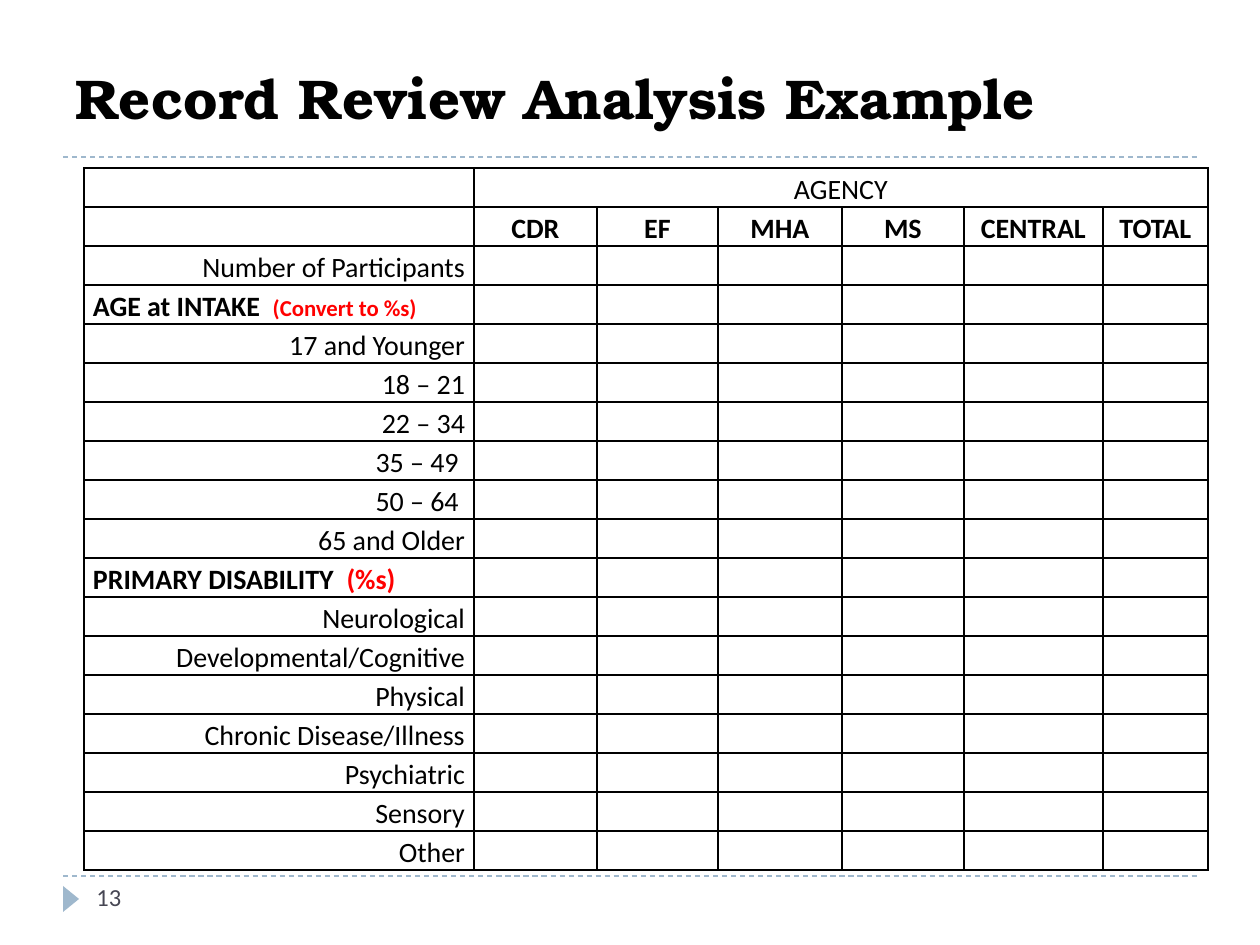
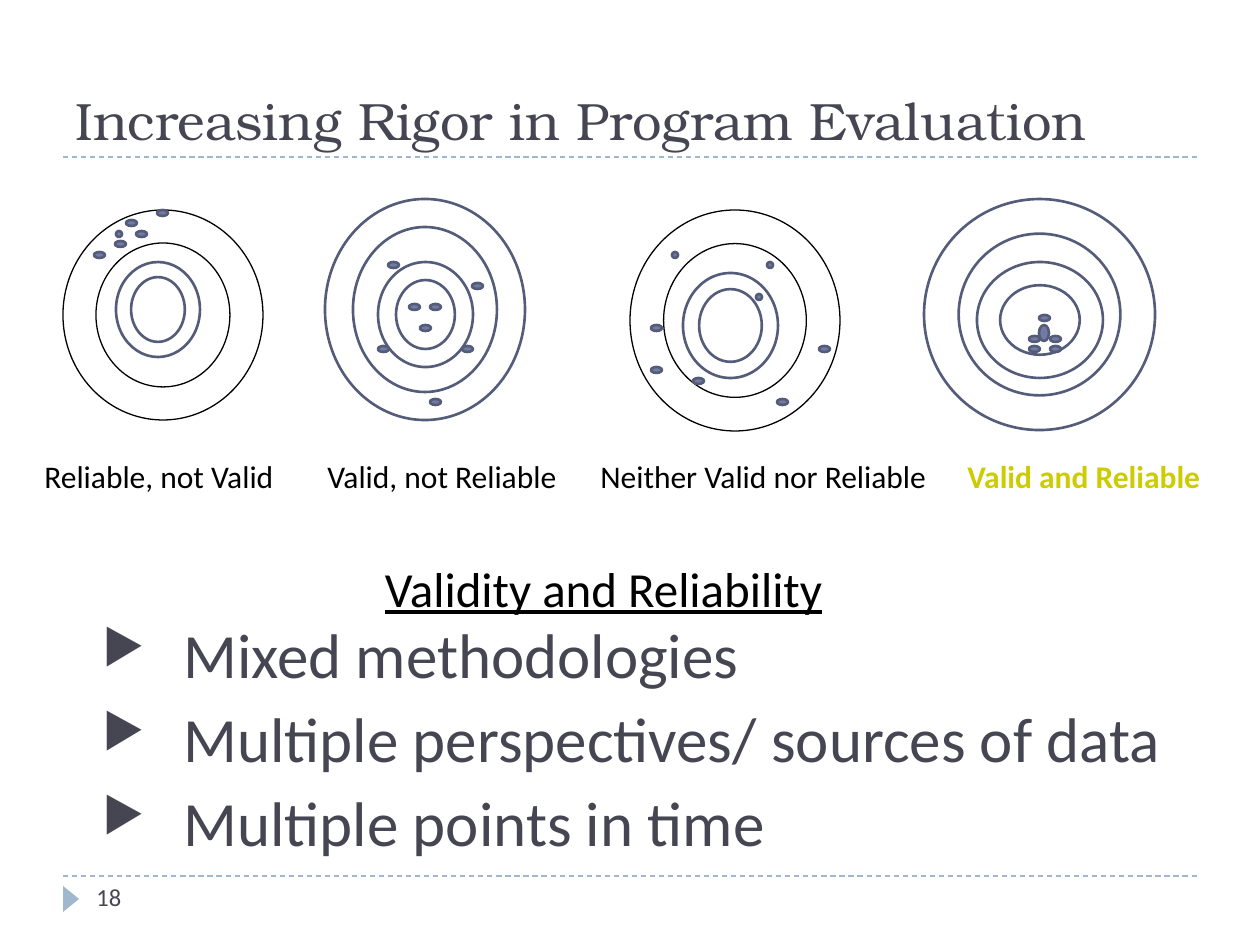
from lxml.etree import SubElement as Sub
from pptx import Presentation
from pptx.dml.color import RGBColor as Rgb
from pptx.enum.dml import MSO_LINE as Dash
from pptx.enum.shapes import MSO_CONNECTOR as Link, MSO_SHAPE as Kind
from pptx.enum.text import MSO_ANCHOR as Anchor, PP_ALIGN as Align
from pptx.oxml.ns import qn
from pptx.util import Emu, Pt

HUES = {"ink": "000000", "slate": "464653", "sky": "9FB8CD", "dot": "727CA3",
        "ring": "545C79", "red": "FF0000", "lime": "CCCC00"}
RGB = {name: Rgb.from_string(code) for name, code in HUES.items()}
BODY, HEAD = "Calibri", "TeX Gyre Bonum"
SCALE = 914400 / 126


def px(*vals):
    return [Emu(round(val * SCALE)) for val in vals]


def write(par, text, hue="ink", size=16, **form):
    font = par.add_run()
    font.text = text
    font = font.font
    font.color.rgb = RGB[hue]
    for key, val in {"name": BODY, "size": Pt(size), **form}.items():
        setattr(font, key, val)


deck = Presentation()
deck.slide_width, deck.slide_height = px(1260, 945)

heads = [
    ("Record Review Analysis Example", (63, 38, 1134, 99), "13",
     {"hue": "ink", "size": 32, "bold": True}),
    ("Increasing Rigor in Program Evaluation", (63, 21, 1134, 136), "18",
     {"hue": "slate", "size": 30}),
]
slides = []
for title, area, num, form in heads:
    slide = deck.slides.add_slide(deck.slide_layouts[6])
    slides.append(slide)
    for y in (876, 157):
        rule = slide.shapes.add_connector(Link.STRAIGHT, *px(63, y, 1197, y))
        rule.line.color.rgb = RGB["sky"]
        rule.line.width = Pt(0.75)
        rule.line.dash_style = Dash.DASH
        Sub(rule._element.spPr, qn("a:effectLst"))
    mark = slide.shapes.add_shape(Kind.ISOSCELES_TRIANGLE, *px(58, 891, 26, 16))
    mark.rotation = 90
    mark.shadow.inherit = False
    mark.fill.solid()
    mark.fill.fore_color.rgb = RGB["sky"]
    mark.line.fill.background()
    frame = slide.shapes.add_textbox(*px(*area)).text_frame
    frame.word_wrap = True
    frame.vertical_anchor = Anchor.BOTTOM
    write(frame.paragraphs[0], title, name=HEAD, **form)
    frame = slide.shapes.add_textbox(*px(84, 876, 273, 50)).text_frame
    frame.word_wrap = True
    write(frame.paragraphs[0], num, "slate", 14)

review, rigor = slides

groups = ["CDR", "EF", "MHA", "MS", "CENTRAL", "TOTAL"]
labels = [
    "Number of Participants", ("AGE at INTAKE  ", "(Convert to %s)", 13),
    "17 and Younger", "18 – 21", "22 – 34", "35 – 49 ", "50 – 64 ", "65 and Older",
    ("PRIMARY DISABILITY  ", "(%s)", 16), "Neurological", "Developmental/Cognitive",
    "Physical", "Chronic Disease/Illness", "Psychiatric", "Sensory", "Other",
]
wides = [390, 123, 121, 124, 122, 139, 105]
count = len(labels) + 2
grid = review.shapes.add_table(count, len(wides), *px(84, 168, sum(wides), 39 * count)).table
grid.first_row = grid.horz_banding = False
for col, wide in zip(grid.columns, wides):
    col.width = px(wide)[0]
for row in grid.rows:
    row.height = px(39)[0]
grid.cell(0, 1).merge(grid.cell(0, 6))

pad = px(9)[0]
look = {"margin_left": pad, "margin_right": pad, "margin_top": 0, "margin_bottom": 0,
        "vertical_anchor": Anchor.MIDDLE}
for cell in grid.iter_cells():
    for key, val in look.items():
        setattr(cell, key, val)
    prop = cell._tc.get_or_add_tcPr()
    for side in ("a:lnL", "a:lnR", "a:lnT", "a:lnB"):
        edge = Sub(prop, qn(side), w=str(Pt(1)))
        Sub(Sub(edge, qn("a:solidFill")), qn("a:srgbClr"), val=HUES["ink"])
    cell.fill.background()
    cell.text_frame.paragraphs[0].line_spacing = 1.15

tops = [(0, 1, "AGENCY", False)]
tops += [(1, col, name, True) for col, name in enumerate(groups, 1)]
for row, col, name, bold in tops:
    par = grid.cell(row, col).text_frame.paragraphs[0]
    par.alignment = Align.CENTER
    write(par, name, bold=bold)
for row, label in enumerate(labels, 2):
    par = grid.cell(row, 0).text_frame.paragraphs[0]
    if isinstance(label, tuple):
        name, note, size = label
        write(par, name, bold=True)
        write(par, note, "red", size, bold=True)
    else:
        par.alignment = Align.RIGHT
        write(par, label)
for cell in grid.iter_cells():
    par = cell.text_frame.paragraphs[0]
    if not par.runs:
        Sub(par._p, qn("a:endParaRPr"), sz="1600")

rings = [
    (63, 210, 200, 210, 0.165, "ink"), (116, 262, 84, 95, 0.18, "ring"),
    (325, 199, 200, 221, 0.14, "ring"), (378, 262, 95, 105, 0.19, "ring"),
    (630, 210, 210, 221, 0.16, "ink"), (683, 273, 95, 105, 0.17, "ring"),
    (924, 199, 231, 231, 0.15, "ring"), (977, 262, 126, 116, 0.2, "ring"),
]
for *area, thick, hue in rings:
    ring = rigor.shapes.add_shape(Kind.DONUT, *px(*area))
    ring.adjustments[0] = thick
    ring.shadow.inherit = False
    ring.fill.background()
    ring.line.color.rgb = RGB[hue]
    ring.line.width = Pt(0.75 if hue == "ink" else 1.5)

flat, small, tall = (11, 6), (6, 6), (10, 16)
dots = {
    flat: [
        (136, 231), (157, 210), (94, 252), (115, 241), (126, 220),
        (420, 325), (430, 304), (472, 283), (378, 346), (430, 399), (388, 262),
        (462, 346), (409, 304),
        (819, 346), (651, 325), (651, 367), (777, 399), (693, 378),
        (1050, 336), (1050, 346), (1029, 336), (1029, 346), (1039, 315),
    ],
    small: [(116, 231), (672, 252), (767, 262), (756, 294)],
    tall: [(1039, 325)],
}
for size, spots in dots.items():
    for spot in spots:
        dot = rigor.shapes.add_shape(Kind.OVAL, *px(*spot, *size))
        dot.shadow.inherit = False
        dot.fill.solid()
        dot.fill.fore_color.rgb = RGB["dot"]
        dot.line.color.rgb = RGB["ring"]
        dot.line.width = Pt(1.5)

notes = [
    ("Reliable, not Valid", (32, 451, 262, 50), {"size": 18}),
    ("Valid, not Reliable", (315, 451, 262, 50), {"size": 18}),
    ("Neither Valid nor Reliable", (588, 451, 357, 50), {"size": 18}),
    ("Valid and Reliable", (955, 451, 305, 50), {"size": 18, "hue": "lime", "bold": True}),
    ("Validity and Reliability", (325, 552, 557, 72), {"size": 28, "underline": True}),
]
for text, area, form in notes:
    frame = rigor.shapes.add_textbox(*px(*area)).text_frame
    frame.word_wrap = True
    par = frame.paragraphs[0]
    if "underline" in form:
        par.alignment = Align.CENTER
    write(par, text, **form)

points = ["Mixed methodologies", "Multiple perspectives/ sources of data",
          "Multiple points in time"]
frame = rigor.shapes.add_textbox(*px(53, 609, 1155, 252)).text_frame
frame.word_wrap = True
left, hang = px(118, -81)
for num, point in enumerate(points):
    par = frame.add_paragraph() if num else frame.paragraphs[0]
    par.space_before = Pt(5)
    prop = par._p.get_or_add_pPr()
    prop.set("marL", str(left))
    prop.set("indent", str(hang))
    Sub(prop, qn("a:buSzPct"), val="76000")
    Sub(prop, qn("a:buChar"), char="▶")
    write(par, point, "slate", 36)

deck.save("out.pptx")
